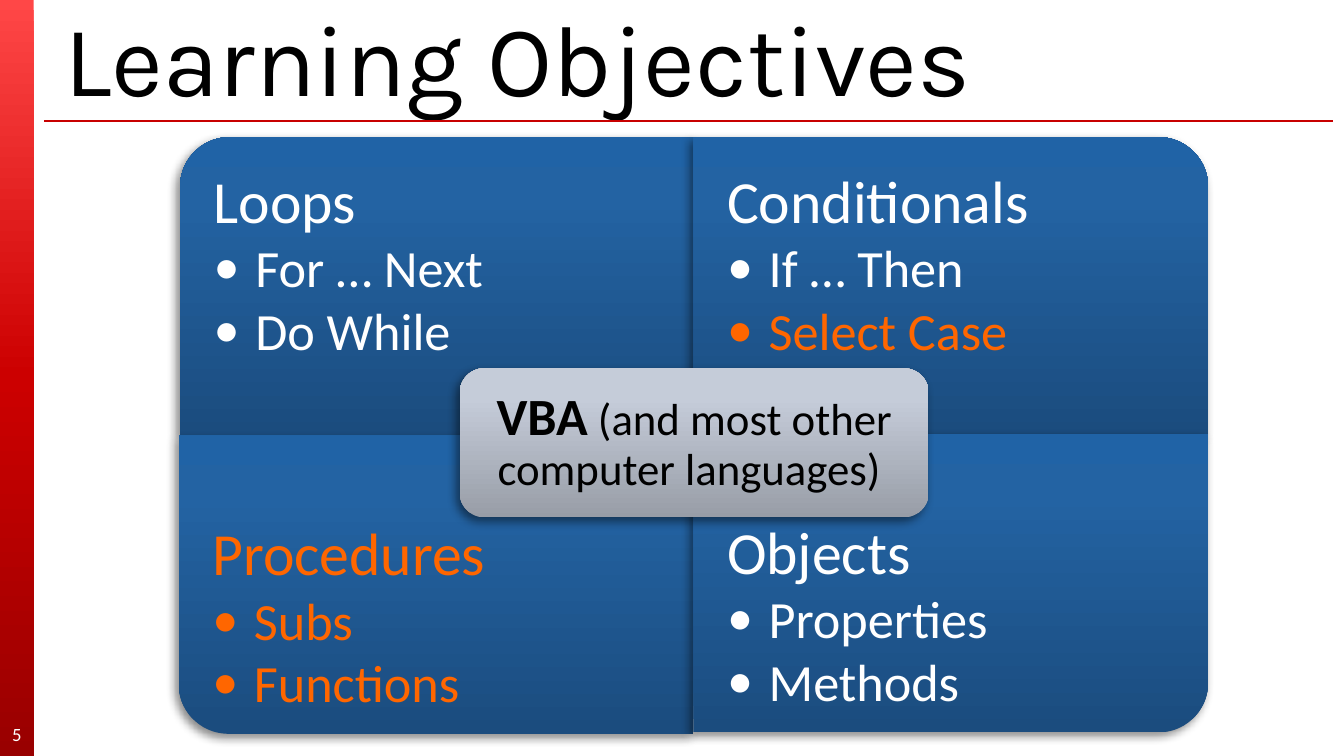
from math import cos, pi, sin

from lxml.etree import SubElement
from pptx import Presentation
from pptx.dml.color import RGBColor
from pptx.enum.shapes import MSO_CONNECTOR, MSO_SHAPE
from pptx.enum.text import MSO_ANCHOR, MSO_AUTO_SIZE, PP_ALIGN
from pptx.oxml.ns import qn
from pptx.util import Inches, Pt

COLORS = {
    "white": "FFFFFF",
    "black": "000000",
    "orange": "FF6600",
    "rule": "C80000",
}
SLIDE_WIDTH = Inches(10)
SLIDE_HEIGHT = SLIDE_WIDTH * 9 // 16
BAR_STOPS = [(0, "FF4747"), (50, "CC0000"), (100, "990000")]
QUADRANT_STOPS = [(0, "1B4C7E"), (80, "2363A3"), (100, "2063A6")]
CENTER_STOPS = [(0, "989DA7"), (80, "C5CCD9"), (100, "C6CCDB")]
DOWNWARD, UPWARD = 270, 90
QUADRANT_WIDTH, QUADRANT_HEIGHT, CORNER_RADIUS = 3.83, 2.22, 0.37
ARC_STEPS = 24
TOP_INSETS = (0.25, 0.2, 0.25, 0.8)
BOTTOM_INSETS = (0.25, 0.6, 0.25, 0.25)

QUADRANTS = [
    ((5.17, 3.24), (-1, -1), TOP_INSETS,
     [("Loops", "white"), ("For … Next", "white"), ("Do While", "white")]),
    ((5.16, 3.24), (1, -1), TOP_INSETS,
     [("Conditionals", "white"), ("If … Then", "white"), ("Select Case", "orange")]),
    ((5.16, 3.24), (-1, 1), BOTTOM_INSETS,
     [("Procedures", "orange"), ("Subs", "orange"), ("Functions", "orange")]),
    ((5.16, 3.23), (1, 1), BOTTOM_INSETS,
     [("Objects", "white"), ("Properties", "white"), ("Methods", "white")]),
]


def apply_format(target, values):
    for name, value in values.items():
        setattr(target, name, value)


def format_font(font, size, color, name="Calibri", bold=False):
    apply_format(font, {"name": name, "size": Pt(size), "bold": bold})
    font.color.rgb = RGBColor.from_string(COLORS[color])


def format_frame(frame, anchor, insets):
    left, top, right, bottom = map(Inches, insets)
    apply_format(frame, {
        "word_wrap": True,
        "auto_size": MSO_AUTO_SIZE.NONE,
        "vertical_anchor": anchor,
        "margin_left": left,
        "margin_top": top,
        "margin_right": right,
        "margin_bottom": bottom,
    })


def fill_gradient(shape, stops, angle):
    shape.shadow.inherit = False
    shape.line.fill.background()
    shape.fill.gradient()
    shape.fill.gradient_angle = angle
    stop_list = next(shape._element.spPr.iter(qn("a:gsLst")))
    for stop in list(stop_list):
        stop_list.remove(stop)
    for position, color in stops:
        stop = SubElement(stop_list, qn("a:gs"), pos=str(position * 1000))
        SubElement(stop, qn("a:srgbClr"), val=color)


def add_shadow(shape):
    effects = shape._element.spPr.find(qn("a:effectLst"))
    shadow = SubElement(effects, qn("a:outerShdw"), blurRad=str(Pt(5)),
                        dist=str(Pt(3)), dir=str(135 * 60000), rotWithShape="0")
    color = SubElement(shadow, qn("a:srgbClr"), val=COLORS["black"])
    SubElement(color, qn("a:alpha"), val="45000")


def add_bullet(paragraph):
    paragraph.level = 1
    properties = paragraph._p.get_or_add_pPr()
    properties.set("marL", str(Inches(0.31)))
    properties.set("indent", str(Inches(-0.31)))
    SubElement(properties, qn("a:buFont"), typeface="Calibri")
    SubElement(properties, qn("a:buChar"), char="•")


def add_side_bar(slide):
    bar = slide.shapes.add_shape(
        MSO_SHAPE.RECTANGLE, 0, 0, Inches(0.25), SLIDE_HEIGHT)
    fill_gradient(bar, BAR_STOPS, DOWNWARD)


def add_title_rule(slide):
    rule = slide.shapes.add_connector(
        MSO_CONNECTOR.STRAIGHT, Inches(0.33), Inches(0.9), Inches(9.92), Inches(0.9))
    rule.line.color.rgb = RGBColor.from_string(COLORS["rule"])
    rule.line.width = Pt(0.75)
    SubElement(rule._element.spPr, qn("a:effectLst"))


def add_title(slide, text):
    title = slide.shapes.title
    apply_format(title, {"left": Inches(0.38), "top": Inches(0.15),
                         "width": Inches(9.58), "height": Inches(0.53)})
    format_frame(title.text_frame, MSO_ANCHOR.MIDDLE, (0.1, 0.05, 0.1, 0.05))
    paragraph = title.text_frame.paragraphs[0]
    paragraph.alignment = PP_ALIGN.LEFT
    run = paragraph.add_run()
    run.text = text
    format_font(run.font, 54, "black", "Karla")


def add_slide_number(slide, text):
    box = slide.shapes.add_textbox(0, Inches(5.31), Inches(0.25), Inches(0.3))
    format_frame(box.text_frame, MSO_ANCHOR.MIDDLE, (0, 0, 0, 0))
    paragraph = box.text_frame.paragraphs[0]
    paragraph.alignment = PP_ALIGN.CENTER
    run = paragraph.add_run()
    run.text = text
    format_font(run.font, 10, "white")


def quadrant_outline(inner, direction):
    (inner_x, inner_y), (sign_x, sign_y) = inner, direction
    outer_x = inner_x + sign_x * QUADRANT_WIDTH
    outer_y = inner_y + sign_y * QUADRANT_HEIGHT
    points = [inner, (inner_x, outer_y)]
    for step in range(ARC_STEPS + 1):
        angle = pi / 2 * step / ARC_STEPS
        points.append((outer_x - sign_x * CORNER_RADIUS * (1 - sin(angle)),
                       outer_y - sign_y * CORNER_RADIUS * (1 - cos(angle))))
    points.append((outer_x, inner_y))
    return [(Inches(x), Inches(y)) for x, y in points]


def add_quadrant(slide, inner, direction, insets, lines):
    start, *points = quadrant_outline(inner, direction)
    builder = slide.shapes.build_freeform(*start)
    builder.add_line_segments(points, close=True)
    quadrant = builder.convert_to_shape()
    fill_gradient(quadrant, QUADRANT_STOPS, UPWARD)
    add_shadow(quadrant)
    frame = quadrant.text_frame
    format_frame(frame, MSO_ANCHOR.TOP, insets)
    for index, (text, color) in enumerate(lines):
        paragraph = frame.add_paragraph() if index else frame.paragraphs[0]
        paragraph.alignment = PP_ALIGN.LEFT
        if index:
            add_bullet(paragraph)
        run = paragraph.add_run()
        run.text = text
        format_font(run.font, 28 if index else 32, color)


def add_center_label(slide):
    label = slide.shapes.add_shape(
        MSO_SHAPE.ROUNDED_RECTANGLE,
        Inches(3.42), Inches(2.74), Inches(3.49), Inches(1.11))
    fill_gradient(label, CENTER_STOPS, UPWARD)
    add_shadow(label)
    format_frame(label.text_frame, MSO_ANCHOR.MIDDLE, (0.17,) * 4)
    paragraph = label.text_frame.paragraphs[0]
    apply_format(paragraph, {"alignment": PP_ALIGN.CENTER, "line_spacing": 0.9})
    for text, size, bold in [
        ("VBA", 28, True),
        (" (and most other computer languages) ", 24, False),
    ]:
        run = paragraph.add_run()
        run.text = text
        format_font(run.font, size, "black", bold=bold)


def main():
    presentation = Presentation()
    presentation.slide_width = SLIDE_WIDTH
    presentation.slide_height = SLIDE_HEIGHT
    slide = presentation.slides.add_slide(presentation.slide_layouts[5])
    add_side_bar(slide)
    add_title_rule(slide)
    add_title(slide, "Learning Objectives")
    add_slide_number(slide, "5")
    for quadrant in QUADRANTS:
        add_quadrant(slide, *quadrant)
    add_center_label(slide)
    presentation.save("out.pptx")


if __name__ == "__main__":
    main()
